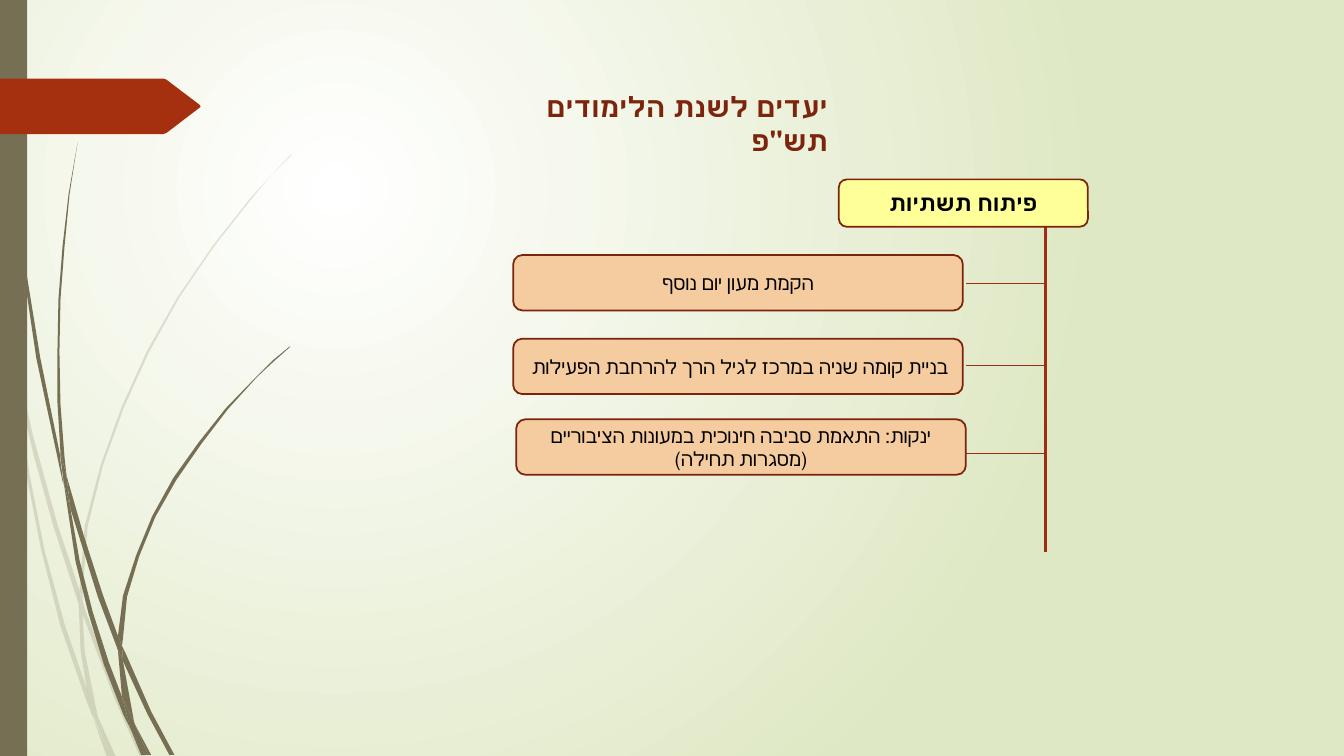
"""Builds the slide of school-year goals with its infrastructure branch."""
from dataclasses import dataclass

from lxml import etree
from pptx import Presentation
from pptx.dml import color
from pptx.enum import shapes, text
from pptx.oxml import ns
from pptx.util import Inches, Pt

FONT = "League Spartan"
COLORS = {
    "white": "FFFFFF", "mist": "DFE8C4", "stem": "766F54", "arrow": "A53010",
    "title": "7C240C", "border": "7A240C", "branch": "9E2E0F",
    "yellow": "FFFF99", "peach": "F5CBA0", "black": "000000",
}
TRUNK_X, TWIG_END_X = 10.37, 9.58


@dataclass
class Box:
    """A rounded box with its label."""
    left: float
    top: float
    width: float
    height: float
    label: str
    fill: str = "peach"
    size: int = 14
    bold: bool = False


@dataclass
class Line:
    """A straight line between two points."""
    start: tuple[float, float]
    end: tuple[float, float]
    width: float = 0.75


@dataclass
class Tuft:
    """A tuft of grass: leaf outlines and their opacity in percent."""
    leaves: list[list[tuple[float, float]]]
    alpha: int = 100


PALE_TUFT = Tuft([
    [(0.1, 3.5), (0.08, 3.22), (0, 2.82), (0, 2.99), (0.09, 3.44)],
    [(0.53, 5.22), (0.78, 5.99), (0.79, 5.86), (0.57, 5.2), (0.33, 4.33), (0.13, 3.45),
     (0.16, 3.76), (0.33, 4.5)],
    [(0.85, 6.07), (0.82, 5.96), (0.82, 6.1), (1.14, 6.94), (1.39, 7.51), (1.44, 7.51),
     (1.18, 6.92)],
    [(1.1, 7.51), (1.15, 7.51), (0.97, 7.11)],
    [(0.86, 6.83), (0.64, 6.19), (0.44, 5.45), (0.29, 4.69), (0.16, 3.76), (0.1, 3.5),
     (0.26, 4.7), (0.41, 5.46), (0.6, 6.21), (0.85, 6.93), (0.93, 7.14), (0.92, 7.07)],
    [(0.78, 5.99), (0.8, 6.46), (0.86, 6.83), (0.89, 6.92), (0.97, 7.11), (0.96, 7.06),
     (0.84, 6.46), (0.82, 6.1), (0.81, 6.08)],
    [(0.82, 5.84), (0.87, 5.22), (1.02, 4.62), (1.23, 4.04), (1.48, 3.49), (1.78, 2.95),
     (2.12, 2.45), (2.49, 1.98), (2.68, 1.75), (2.89, 1.54), (2.89, 1.53), (2.68, 1.75),
     (2.48, 1.97), (2.11, 2.44), (1.76, 2.95), (1.46, 3.48), (1.21, 4.03), (1, 4.61),
     (0.84, 5.22), (0.79, 5.84), (0.79, 5.86), (0.82, 5.96)],
    [(0.93, 7.14), (1.06, 7.51), (1.1, 7.51)],
    [(0.81, 6.08), (0.82, 6.1), (0.82, 5.96), (0.78, 5.86), (0.78, 5.99)],
    [(0.89, 6.92), (0.86, 6.83), (0.92, 7.07), (0.94, 7.14), (1.1, 7.51), (0.97, 7.11)],
], 20)
DARK_TUFT = Tuft([
    [(0.07, 1.1), (0.18, 2.33), (0.36, 3.55), (0.62, 4.77), (0.63, 4.81), (0.6, 4.57),
     (0.6, 4.53), (0.4, 3.55), (0.2, 2.32), (0.08, 1.09), (0.05, 0.48), (0.04, 0),
     (0.03, 0), (0.04, 0.48)],
    [(0.97, 5.92), (1.17, 6.45), (1.17, 6.31), (1.02, 5.9), (0.83, 5.31), (0.66, 4.72),
     (0.7, 5.05)],
    [(1.25, 6.49), (1.21, 6.41), (1.22, 6.56), (1.46, 7.08), (1.68, 7.49), (1.73, 7.49),
     (1.5, 7.06)],
    [(1.21, 6.91), (1.08, 6.57), (0.92, 6.07), (0.79, 5.56), (0.7, 5.05), (0.63, 4.77),
     (0.75, 5.57), (0.88, 6.09), (1.03, 6.59), (1.22, 7.08), (1.29, 7.22), (1.28, 7.17)],
    [(0.66, 4.72), (0.64, 4.53), (0.6, 4.01), (0.59, 3.49), (0.6, 2.97), (0.64, 2.45),
     (0.69, 1.93), (0.77, 1.41), (0.68, 1.93), (0.62, 2.45), (0.58, 2.97), (0.57, 3.49),
     (0.57, 3.99), (0.6, 4.49)],
    [(1.47, 7.49), (1.5, 7.49), (1.34, 7.19)],
    [(0.63, 4.77), (0.7, 5.05), (0.66, 4.72), (0.6, 4.49), (0.6, 4.53)],
    [(1.22, 6.33), (1.26, 5.92), (1.38, 5.52), (1.54, 5.13), (1.75, 4.76), (2, 4.4),
     (2.26, 4.06), (2.55, 3.74), (2.71, 3.59), (2.88, 3.44), (2.87, 3.44), (2.7, 3.58),
     (2.55, 3.73), (2.24, 4.05), (1.97, 4.39), (1.72, 4.74), (1.51, 5.12), (1.35, 5.51),
     (1.22, 5.91), (1.17, 6.31), (1.21, 6.41)],
    [(1.29, 7.22), (1.4, 7.49), (1.44, 7.49)],
    [(1.17, 6.45), (1.21, 6.91), (1.28, 7.06), (1.34, 7.19), (1.33, 7.16), (1.22, 6.56),
     (1.2, 6.51)],
    [(1.17, 6.45), (1.2, 6.51), (1.22, 6.56), (1.21, 6.41), (1.17, 6.31)],
    [(1.28, 7.06), (1.21, 6.91), (1.28, 7.17), (1.29, 7.22), (1.44, 7.49), (1.47, 7.49),
     (1.34, 7.19)],
])
ARROW = [(1.99, 1.06), (1.65, 1.32), (1.62, 1.33), (0, 1.33), (0, 0.78), (1.62, 0.78),
         (1.65, 0.79), (1.98, 1.04)]
BOXES = [
    Box(8.32, 1.78, 2.47, 0.47, "פיתוח תשתיות", "yellow", 16, True),
    Box(5.09, 2.53, 4.46, 0.55, "הקמת מעון יום נוסף"),
    Box(5.09, 3.36, 4.46, 0.55, "בניית קומה שניה במרכז לגיל הרך להרחבת הפעילות "),
    Box(5.12, 4.16, 4.46, 0.55,
        "ינקות: התאמת סביבה חינוכית במעונות הציבוריים (מסגרות תחילה)"),
]
LINES = [Line((TRUNK_X, 2.25), (TRUNK_X, 5.48), 2.25)] + [
    Line((TRUNK_X, y), (TWIG_END_X, y)) for y in (2.81, 3.63, 4.5)
]


def rgb(name: str) -> color.RGBColor:
    """Return a named colour."""
    return color.RGBColor.from_string(COLORS[name])


def write(frame, content: str, *, size: int, ink: str = "black", bold: bool = False,
          align=text.PP_ALIGN.CENTER, anchor=text.MSO_ANCHOR.MIDDLE) -> None:
    """Put one right-to-left paragraph into a text frame."""
    frame.word_wrap = True
    frame.auto_size = text.MSO_AUTO_SIZE.NONE
    frame.vertical_anchor = anchor
    paragraph = frame.paragraphs[0]
    paragraph.alignment = align
    paragraph._p.get_or_add_pPr().set("rtl", "1")
    run = paragraph.add_run()
    run.text = content
    run.font.name, run.font.size, run.font.bold = FONT, Pt(size), bold
    run.font.color.rgb = rgb(ink)


def paint(shape, fill: str, border: str | None = None) -> None:
    """Give a shape a flat fill and an optional border."""
    shape.shadow.inherit = False
    shape.fill.solid()
    shape.fill.fore_color.rgb = rgb(fill)
    if border:
        shape.line.color.rgb = rgb(border)
        shape.line.width = Pt(1.25)
    else:
        shape.line.fill.background()


def add_preset(slide, kind, left: float, top: float, width: float, height: float):
    """Add a preset shape measured in inches."""
    return slide.shapes.add_shape(kind, *map(Inches, (left, top, width, height)))


def add_outline(owner, outline: list[tuple[float, float]], fill: str):
    """Draw a closed filled outline on a slide or in a group."""
    first, *rest = [(Inches(x), Inches(y)) for x, y in outline]
    builder = owner.shapes.build_freeform(*first)
    builder.add_line_segments(rest, close=True)
    shape = builder.convert_to_shape()
    paint(shape, fill)
    return shape


def add_tuft(slide, tuft: Tuft) -> None:
    """Draw a tuft of grass as one group."""
    group = slide.shapes.add_group_shape()
    for leaf in tuft.leaves:
        shape = add_outline(group, leaf, "stem")
        if tuft.alpha < 100:
            tone = shape._element.spPr.find(".//" + ns.qn("a:srgbClr"))
            etree.SubElement(tone, ns.qn("a:alpha"), val=str(tuft.alpha * 1000))


def add_box(slide, box: Box) -> None:
    """Draw a labelled rounded box."""
    shape = add_preset(slide, shapes.MSO_SHAPE.ROUNDED_RECTANGLE,
                       box.left, box.top, box.width, box.height)
    paint(shape, box.fill, "border")
    write(shape.text_frame, box.label, size=box.size, bold=box.bold)


def add_line(slide, line: Line) -> None:
    """Draw one line of the tree."""
    connector = slide.shapes.add_connector(
        shapes.MSO_CONNECTOR.STRAIGHT, *map(Inches, (*line.start, *line.end)))
    connector.line.color.rgb = rgb("branch")
    connector.line.width = Pt(line.width)
    etree.SubElement(connector._element.spPr, ns.qn("a:effectLst"))


def set_background(slide) -> None:
    """Fill the background with a radial gradient."""
    fill = slide.background.fill
    fill.gradient()
    for stop, name in zip(fill.gradient_stops, ("white", "mist")):
        stop.color.rgb = rgb(name)
    gradient = slide.element.find(".//" + ns.qn("a:gradFill"))
    gradient.remove(gradient.find(ns.qn("a:lin")))
    circle = etree.SubElement(gradient, ns.qn("a:path"), {"path": "circle"})
    etree.SubElement(circle, ns.qn("a:fillToRect"),
                     l="50000", t="50000", r="100000", b="100000")


def add_title(slide, content: str) -> None:
    """Place and format the title."""
    title = slide.shapes.title
    title.left, title.top, title.width, title.height = map(Inches, (5.33, 0.84, 3.69, 0.44))
    frame = title.text_frame
    frame.margin_left, frame.margin_right = 0, Inches(0.81)
    write(frame, content, size=20, ink="title", bold=True,
          align=text.PP_ALIGN.RIGHT, anchor=text.MSO_ANCHOR.TOP)


def main() -> None:
    """Build and save the presentation."""
    presentation = Presentation()
    presentation.slide_width, presentation.slide_height = Inches(13.33), Inches(7.5)
    slide = presentation.slides.add_slide(presentation.slide_layouts.get_by_name("Title Only"))
    set_background(slide)
    for tuft in (PALE_TUFT, DARK_TUFT):
        add_tuft(slide, tuft)
    paint(add_preset(slide, shapes.MSO_SHAPE.RECTANGLE, 0, 0, 0.27, 7.5), "stem")
    add_outline(slide, ARROW, "arrow")
    for line in LINES:
        add_line(slide, line)
    for box in BOXES:
        add_box(slide, box)
    add_title(slide, 'יעדים לשנת הלימודים תש"פ')
    presentation.save("out.pptx")


if __name__ == "__main__":
    main()
